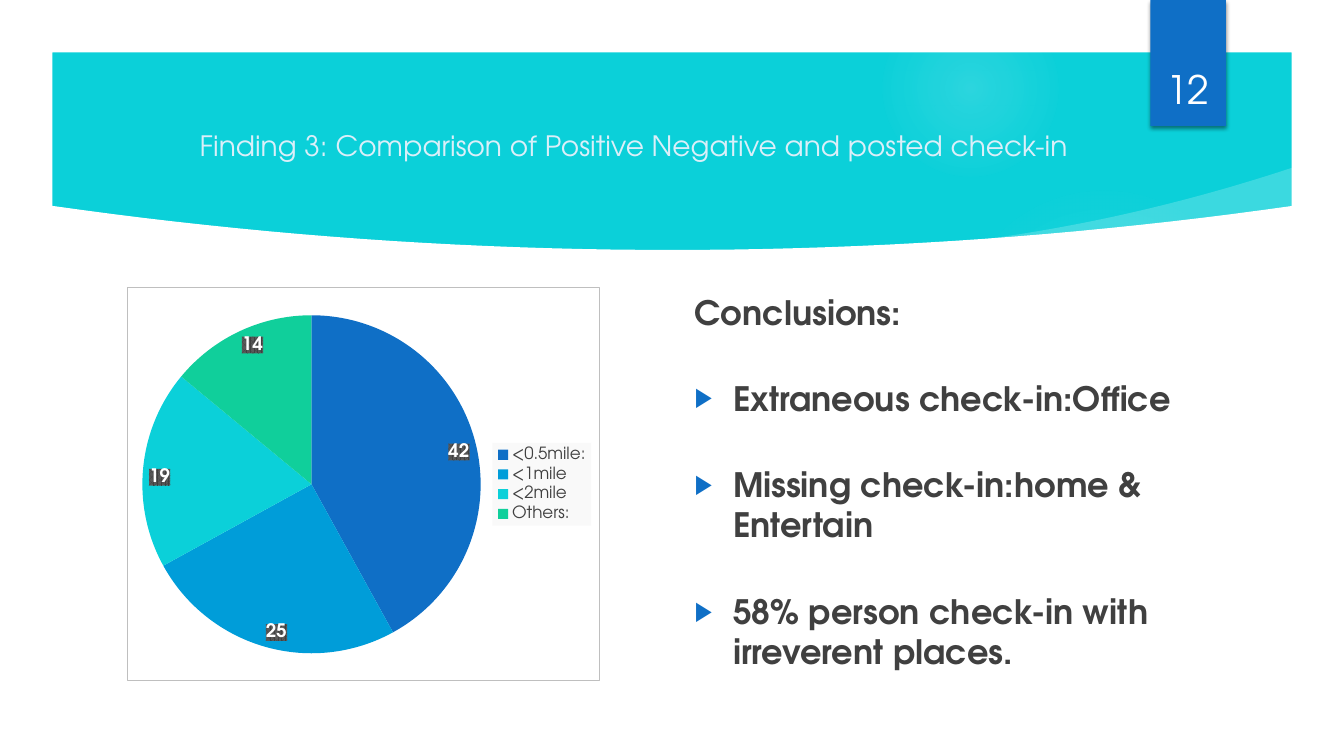
import lxml.etree
import pptx
import pptx.chart.data
import pptx.dml.color
import pptx.enum.chart
import pptx.enum.shapes
import pptx.enum.text
import pptx.oxml
import pptx.util

Inches = pptx.util.Inches
Pt = pptx.util.Pt
Kind = pptx.enum.shapes.MSO_SHAPE
Align = pptx.enum.text.PP_ALIGN
Anchor = pptx.enum.text.MSO_ANCHOR

FONT = "TeX Gyre Adventor"
HUES = {
    "teal": "0BD0D9", "blue": "0F6FC6", "sky": "009DD9", "green": "10CF9B",
    "white": "FFFFFF", "pale": "DBEFF9", "glow": "F1F9FD", "dark": "404040",
    "black": "000000", "edge": "BFBFBF", "mist": "F9F9F9", "gray": "595959",
}
SPACE = ('xmlns:a="http://schemas.openxmlformats.org/drawingml/2006/main" '
         'xmlns:c="http://schemas.openxmlformats.org/drawingml/2006/chart"')


def hue(name):
    return pptx.dml.color.RGBColor.from_string(HUES[name])


def node(tag, body="", attrs=""):
    return pptx.oxml.parse_xml(f"<{tag} {SPACE} {attrs}>{body}</{tag}>")


def tint(name, alpha=100):
    return f'<a:srgbClr val="{HUES[name]}"><a:alpha val="{alpha * 1000}"/></a:srgbClr>'


def style(font, size, color, bold=False):
    font.name = FONT
    font.size = Pt(size)
    font.bold = bold
    font.color.rgb = hue(color)


def write(par, text, size=24, color="dark", bold=False, align=Align.LEFT,
          before=0, left=0, hang=0, bullet=None):
    props = par._p.get_or_add_pPr()
    props.set("marL", str(Inches(left)))
    props.set("indent", str(Inches(-hang)))
    if bullet:
        props.append(node("a:buClr", tint("blue")))
        props.append(node("a:buSzPct", attrs='val="80000"'))
        props.append(node("a:buChar", attrs=f'char="{bullet}"'))
    else:
        props.append(node("a:buNone"))
    par.alignment = align
    par.space_before = Pt(before)
    run = par.add_run()
    run.text = text
    style(run.font, size, color, bold)


class Deck:
    def __init__(self):
        self.show = pptx.Presentation()
        self.show.slide_width = Inches(13.33)
        self.show.slide_height = Inches(7.5)
        self.slide = self.show.slides.add_slide(self.show.slide_layouts[1])
        self.items = self.slide.shapes
        fill = self.slide.background.fill
        fill.solid()
        fill.fore_color.rgb = hue("teal")

    def paint(self, shape, color):
        shape.shadow.inherit = False
        shape.line.fill.background()
        shape.fill.solid()
        shape.fill.fore_color.rgb = hue(color)
        return shape

    def shape(self, kind, box, color):
        return self.paint(self.items.add_shape(kind, *map(Inches, box)), color)

    def glow(self, box, stops):
        ball = self.shape(Kind.OVAL, box, "glow")
        marks = "".join(f'<a:gs pos="{pos * 1000}">{tint("glow", alpha)}</a:gs>'
                        for pos, alpha in stops)
        focus = '<a:fillToRect l="50000" t="50000" r="50000" b="50000"/>'
        grad = node("a:gradFill", f'<a:gsLst>{marks}</a:gsLst>'
                    f'<a:path path="circle">{focus}</a:path>')
        props = ball._element.spPr
        solid = props.find(pptx.oxml.ns.qn("a:solidFill"))
        props.replace(solid, grad)

    def free(self, points, color, alpha=100):
        spots = [(Inches(x), Inches(y)) for x, y in points]
        pen = self.items.build_freeform(*spots[0])
        pen.add_line_segments(spots[1:], close=True)
        form = self.paint(pen.convert_to_shape(), color)
        shade = form._element.spPr.find(pptx.oxml.ns.qn("a:solidFill"))[0]
        shade.append(node("a:alpha", attrs=f'val="{alpha * 1000}"'))

    def flag(self, box):
        tab = self.shape(Kind.RECTANGLE, box, "blue")
        effect = tab._element.spPr.find(pptx.oxml.ns.qn("a:effectLst"))
        effect.append(node("a:outerShdw", tint("black", 45),
                           f'blurRad="{Pt(3)}" dist="{Pt(2)}" dir="5400000" rotWithShape="0"'))

    def text(self, box, rows, holder=None, anchor=Anchor.TOP):
        if holder is None:
            holder = self.items.add_textbox(*map(Inches, box))
        else:
            holder.left, holder.top, holder.width, holder.height = map(Inches, box)
            self.items._spTree.append(holder._element)
        frame = holder.text_frame
        frame.word_wrap = True
        frame.auto_size = pptx.enum.text.MSO_AUTO_SIZE.NONE
        frame.vertical_anchor = anchor
        for spot, (words, form) in enumerate(rows):
            par = frame.add_paragraph() if spot else frame.paragraphs[0]
            write(par, words, **form)

    def pie(self, box, slices):
        data = pptx.chart.data.CategoryChartData()
        data.categories = [name for name, count, color in slices]
        data.add_series("Series 1", [count for name, count, color in slices])
        chart = self.items.add_chart(pptx.enum.chart.XL_CHART_TYPE.PIE,
                                     *map(Inches, box), data).chart
        style(chart.font, 10, "black")
        chart.has_title = False
        chart.has_legend = True
        legend = chart.legend
        legend.position = pptx.enum.chart.XL_LEGEND_POSITION.RIGHT
        legend.include_in_layout = False
        style(legend.font, 12, "dark")
        plot = chart.plots[0]
        plot.vary_by_categories = True
        for spot, (name, count, color) in enumerate(slices):
            fill = plot.series[0].points[spot].format.fill
            fill.solid()
            fill.fore_color.rgb = hue(color)
        labels = plot.series[0].data_labels
        labels.show_value = True
        labels.position = pptx.enum.chart.XL_LABEL_POSITION.INSIDE_END
        style(labels.font, 13.3, "white", True)
        solid = "<a:solidFill>{}</a:solidFill>".format
        edge = f'<a:ln w="{Pt(0.75)}">{solid(tint("edge"))}</a:ln>'
        weave = (f'<a:pattFill prst="pct75"><a:fgClr>{tint("dark")}</a:fgClr>'
                 f'<a:bgClr>{tint("gray")}</a:bgClr></a:pattFill>')
        for part, look in ((chart._chartSpace, solid(tint("white")) + edge),
                           (legend._element, solid(tint("mist"))),
                           (labels._element, weave)):
            part.find(pptx.oxml.ns.qn("c:txPr")).addprevious(node("c:spPr", look))
        area = chart._chartSpace.chart.plotArea
        for old in area.findall(pptx.oxml.ns.qn("c:layout")):
            area.remove(old)
        rules = (("layoutTarget", "inner"), ("xMode", "edge"), ("yMode", "edge"),
                 ("x", 0.03), ("y", 0.07), ("w", 0.72), ("h", 0.86))
        area.insert(0, node("c:layout", "<c:manualLayout>" + "".join(
            f'<c:{tag} val="{val}"/>' for tag, val in rules) + "</c:manualLayout>"))


def main():
    deck = Deck()
    deck.glow((9.41, 1.83, 3.08, 3.08), [(0, 7), (36, 6), (69, 0)])
    deck.glow((8.75, 0, 1.75, 1.75), [(0, 14), (36, 7), (73, 0)])

    steps = [step / 40 for step in range(41)]
    rise = [(9.3 + 3.53 * t, 2.43 - 0.37 * t - 0.4 * t * t) for t in steps]
    deck.free(rise + [(12.87, 2.14), (9.34, 2.5)], "white", 20)
    bowl = [(0.5 + 12.34 * t, 2.48 - 0.44 * (2 * t - 1) ** 2) for t in steps]
    deck.free(bowl + [(12.84, 7), (0.5, 7)], "white")
    frame = deck.shape(Kind.FRAME, (0, 0, 13.33, 7.5), "white")
    frame.adjustments[0] = 0.52 / 7.5
    deck.flag((11.41, 0, 0.75, 1.25))

    title, body = deck.slide.placeholders
    deck.text((1.26, 1.06, 9.78, 0.77),
              [("Finding 3: Comparison of Positive Negative and posted check-in",
                dict(size=20, color="pale", left=0.62))], title, Anchor.MIDDLE)
    point = dict(bold=True, left=0.38, hang=0.38, bullet="▶")
    deck.text((6.79, 2.85, 5.28, 3.74), [
        ("Conclusions:", dict(bold=True)),
        ("Extraneous check-in:Office", dict(point, before=32)),
        ("Missing check-in:home & Entertain", dict(point, before=33)),
        ("58% person check-in with irreverent places.", dict(point, before=33)),
    ], body)
    deck.text((11.32, 0.32, 0.92, 0.84),
              [("12", dict(size=28, color="white", align=Align.CENTER))],
              anchor=Anchor.BOTTOM)
    deck.pie((1.26, 2.85, 4.69, 3.91), [
        ("<0.5mile:", 42, "blue"), ("<1mile", 25, "sky"),
        ("<2mile", 19, "teal"), ("Others:", 14, "green")])
    deck.show.save("out.pptx")


if __name__ == "__main__":
    main()
